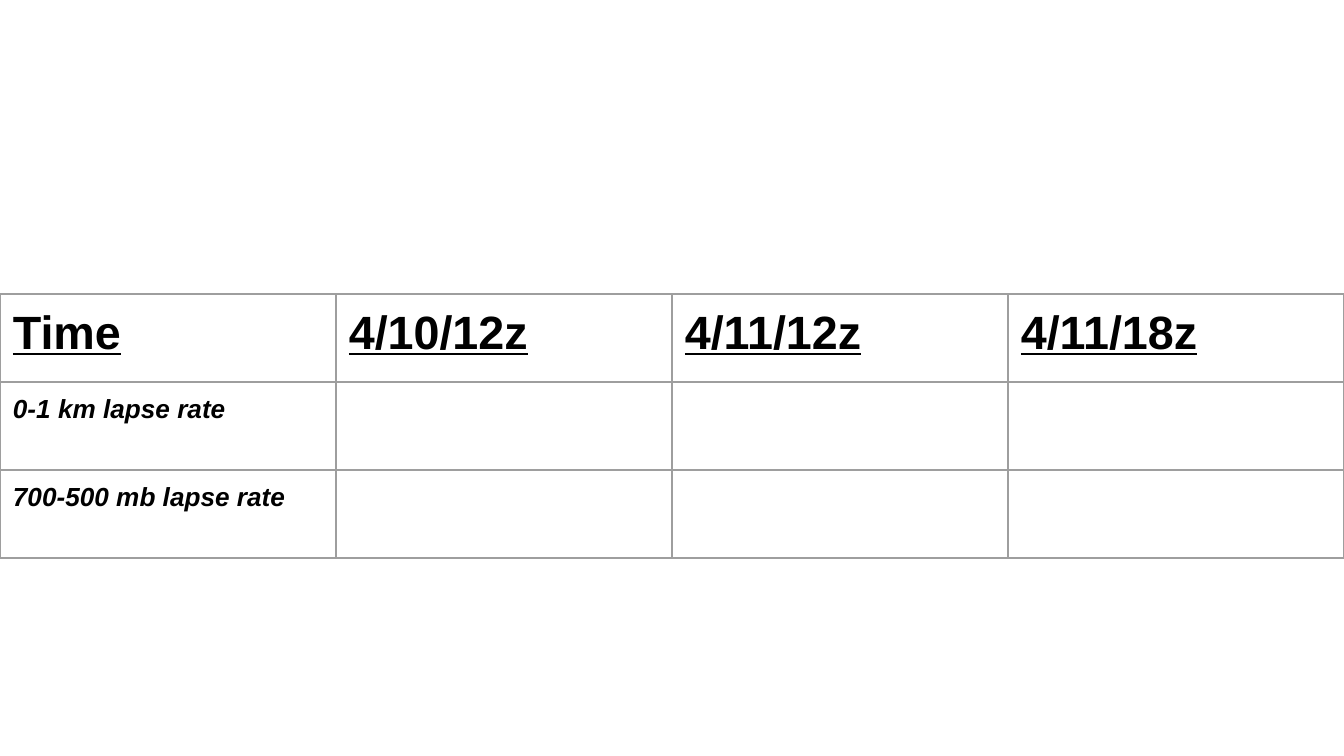
"""Build a slide with a table of lapse rates by sounding time."""
from dataclasses import dataclass

from lxml.etree import SubElement
from pptx import Presentation
from pptx.dml.color import RGBColor
from pptx.oxml.ns import qn
from pptx.table import Table, _Cell
from pptx.util import Emu, Pt

SLIDE_W, SLIDE_H = 1344, 756
TABLE_TOP, ROW_H, CELL_INSET = 294, 88, 13
COLORS = {"text": "000000", "grid": "9E9E9E"}
FONT = "Arial"


@dataclass(frozen=True)
class TextStyle:
    """Look of the text in one kind of cell."""
    size: int
    underline: bool = False
    italic: bool = False


@dataclass(frozen=True)
class Row:
    """One table row, with the style of its labels."""
    labels: tuple[str, ...]
    style: TextStyle


HEADING = TextStyle(25, underline=True)
MEASURE = TextStyle(14, italic=True)
ROWS = (
    Row(("Time", "4/10/12z", "4/11/12z", "4/11/18z"), HEADING),
    Row(("0-1 km lapse rate", "", "", ""), MEASURE),
    Row(("700-500 mb lapse rate", "", "", ""), MEASURE),
)


def px(length: int) -> Emu:
    """Turn pixels into EMU."""
    return Emu(round(length * 9144000 / SLIDE_W))


def add_borders(cell: _Cell) -> None:
    """Rule all four sides of a cell."""
    properties = cell._tc.get_or_add_tcPr()
    for side in ("lnL", "lnR", "lnT", "lnB"):
        border = SubElement(properties, qn(f"a:{side}"), w=str(Pt(0.75)))
        fill = SubElement(border, qn("a:solidFill"))
        SubElement(fill, qn("a:srgbClr"), val=COLORS["grid"])


def write_cell(cell: _Cell, label: str, style: TextStyle) -> None:
    """Format a cell and write its label, if it has one."""
    cell.margin_left = cell.margin_right = px(CELL_INSET)
    cell.margin_top = cell.margin_bottom = px(CELL_INSET)
    add_borders(cell)
    cell.fill.background()
    if label:
        run = cell.text_frame.paragraphs[0].add_run()
        run.text = label
        font = run.font
        font.name, font.size, font.bold = FONT, Pt(style.size), True
        font.underline, font.italic = style.underline, style.italic
        font.color.rgb = RGBColor.from_string(COLORS["text"])


def fill_table(lapse_rates: Table, rows: tuple[Row, ...]) -> None:
    """Write every row of the table."""
    lapse_rates.first_row = lapse_rates.horz_banding = False
    for row_index, row in enumerate(rows):
        for column_index, label in enumerate(row.labels):
            write_cell(lapse_rates.cell(row_index, column_index), label, row.style)


def main() -> None:
    """Build and save the slide."""
    presentation = Presentation()
    presentation.slide_width, presentation.slide_height = px(SLIDE_W), px(SLIDE_H)
    slide = presentation.slides.add_slide(presentation.slide_layouts[6])
    lapse_rates = slide.shapes.add_table(
        len(ROWS), len(ROWS[0].labels),
        px(0), px(TABLE_TOP), px(SLIDE_W), px(ROW_H * len(ROWS)),
    ).table
    fill_table(lapse_rates, ROWS)
    presentation.save("out.pptx")


if __name__ == "__main__":
    main()
